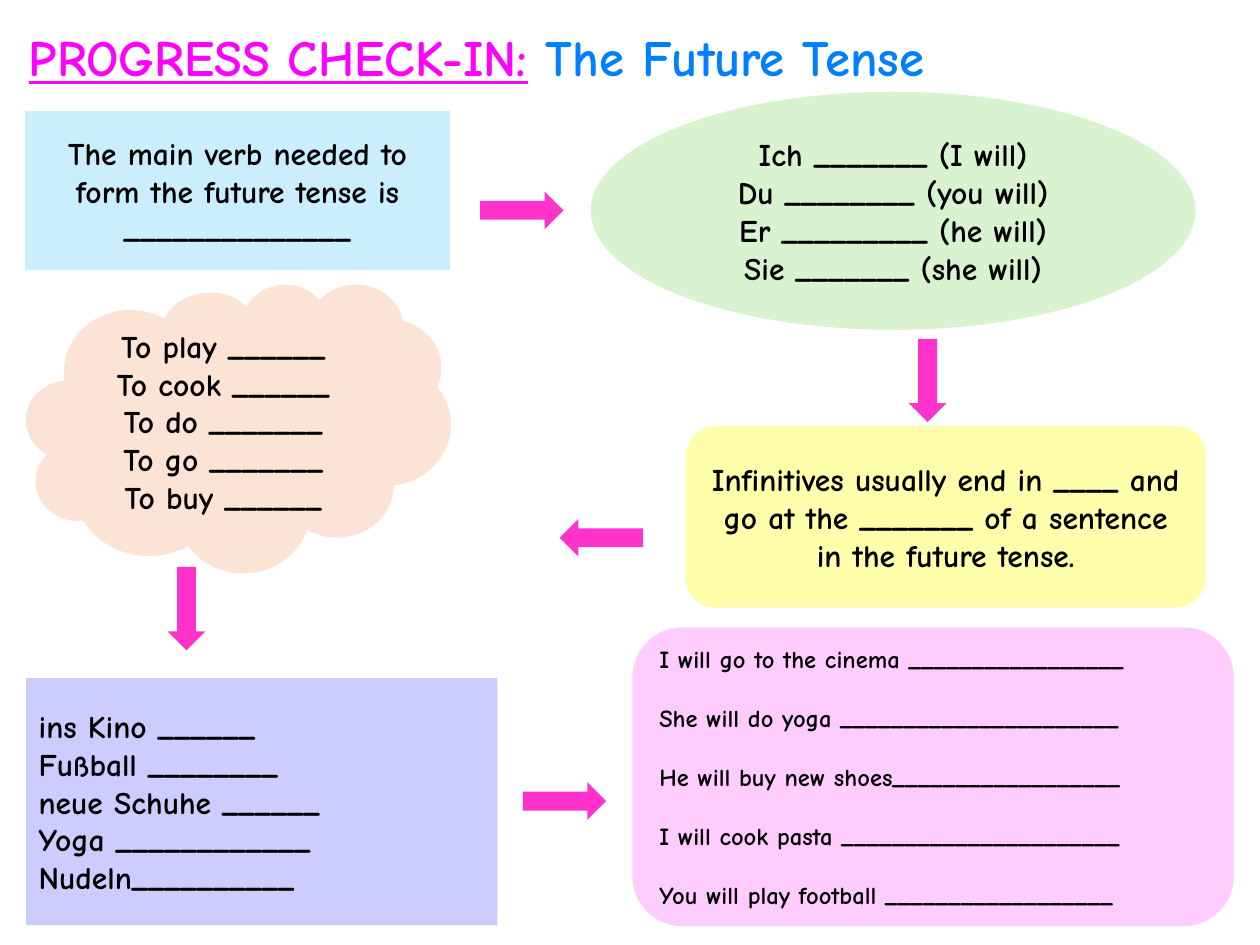
from dataclasses import dataclass

from pptx import Presentation
from pptx.dml.color import RGBColor
from pptx.enum.shapes import MSO_SHAPE
from pptx.enum.text import MSO_ANCHOR, MSO_AUTO_SIZE, PP_ALIGN
from pptx.util import Cm, Pt

RECT, ROUND = MSO_SHAPE.RECTANGLE, MSO_SHAPE.ROUNDED_RECTANGLE
OVAL, CLOUD, ARROW = MSO_SHAPE.OVAL, MSO_SHAPE.CLOUD, MSO_SHAPE.RIGHT_ARROW
LEFT, CENTER = PP_ALIGN.LEFT, PP_ALIGN.CENTER
MIDDLE, NO_FIT = MSO_ANCHOR.MIDDLE, MSO_AUTO_SIZE.NONE

FONT = "Comic Neue"
BLACK = RGBColor(0x00, 0x00, 0x00)
MAGENTA = RGBColor(0xFF, 0x00, 0xFF)
BLUE = RGBColor(0x00, 0x80, 0xFF)
HOT_PINK = RGBColor(0xFF, 0x33, 0xCC)
SKY = RGBColor(0xCA, 0xEE, 0xFB)
GREEN = RGBColor(0xD9, 0xF2, 0xD0)
YELLOW = RGBColor(0xFF, 0xFF, 0xAB)
PEACH = RGBColor(0xFB, 0xE3, 0xD6)
LILAC = RGBColor(0xCC, 0xCC, 0xFF)
PINK = RGBColor(0xFF, 0xCC, 0xFF)


@dataclass
class Panel:
    kind: int
    x: float
    y: float
    w: float
    h: float
    fill: RGBColor
    lines: list[str]
    align: int = CENTER
    size: int = 18
    gap: float = 0  # points between paragraphs


@dataclass
class Arrow:
    x: float
    y: float
    rotation: int = 0


PANELS = [
    Panel(RECT, 0.51, 2.24, 8.56, 3.2, SKY,
          ["The main verb needed to form the future tense is ______________"]),
    Panel(OVAL, 11.91, 1.85, 12.19, 4.8, GREEN,
          ["Ich _______ (I will)", "Du ________ (you will)",
           "Er _________ (he will)", "Sie _______ (she will)"]),
    Panel(ROUND, 13.82, 8.59, 10.49, 3.66, YELLOW,
          ["Infinitives usually end in ____ and go at the _______ "
           "of a sentence in the future tense."]),
    Panel(CLOUD, 0.53, 5.72, 8.56, 5.82, PEACH,
          ["To play ______", "To cook ______", "To do _______",
           "To go _______", "To buy ______"]),
    Panel(RECT, 0.53, 13.67, 9.5, 4.98, LILAC,
          ["ins Kino ______", "Fußball ________", "neue Schuhe ______",
           "Yoga ____________", "Nudeln__________"], LEFT),
    Panel(ROUND, 12.75, 12.65, 12.12, 6.02, PINK,
          ["I will go to the cinema _________________",
           "She will do yoga ______________________",
           "He will buy new shoes__________________",
           "I will cook pasta ______________________",
           "You will play football __________________"], LEFT, 14, 16.8),
]
ARROWS = [Arrow(9.68, 3.86), Arrow(17.86, 7.29, 90), Arrow(11.28, 10.46, 180),
          Arrow(2.92, 11.89, 90), Arrow(10.54, 15.77)]
ARROW_W, ARROW_H = 1.68, 0.76


def style_run(r, size: int, color: RGBColor) -> None:
    r.font.name, r.font.size, r.font.bold = FONT, Pt(size), True
    r.font.color.rgb = color


def add_flat_shape(s, kind: int, x: float, y: float, w: float, h: float,
                   fill: RGBColor):
    sp = s.shapes.add_shape(kind, Cm(x), Cm(y), Cm(w), Cm(h))
    sp.shadow.inherit = False
    sp.fill.solid()
    sp.fill.fore_color.rgb = fill
    sp.line.fill.background()
    return sp


def add_panel(s, panel: Panel) -> None:
    sp = add_flat_shape(s, panel.kind, panel.x, panel.y, panel.w, panel.h,
                        panel.fill)
    tf = sp.text_frame
    tf.word_wrap, tf.vertical_anchor = True, MIDDLE
    tf.text = "\n".join(panel.lines)
    for i, p in enumerate(tf.paragraphs):
        p.alignment = panel.align
        p.space_before = Pt(panel.gap if i else 0)
        style_run(p.runs[0], panel.size, BLACK)


def add_arrow(s, arrow: Arrow) -> None:
    sp = add_flat_shape(s, ARROW, arrow.x, arrow.y, ARROW_W, ARROW_H, HOT_PINK)
    sp.rotation = arrow.rotation


def set_title(s) -> None:
    sp = s.shapes.title
    sp.left, sp.top, sp.width, sp.height = Cm(0.33), Cm(0.38), Cm(23.98), Cm(1.5)
    tf = sp.text_frame
    tf.word_wrap, tf.auto_size, tf.vertical_anchor = True, NO_FIT, MIDDLE
    p = tf.paragraphs[0]
    p.alignment = LEFT
    for text, color, underline in [("PROGRESS CHECK-IN:", MAGENTA, True),
                                   (" The Future Tense", BLUE, False)]:
        r = p.add_run()
        r.text = text
        style_run(r, 29, color)
        r.font.underline = underline


def main() -> None:
    prs = Presentation()
    prs.slide_width, prs.slide_height = Cm(25.4), Cm(19.05)
    s = prs.slides.add_slide(prs.slide_layouts[5])  # title only

    set_title(s)
    # Question panels
    for panel in PANELS:
        add_panel(s, panel)
    # Arrows leading from one panel to the next
    for arrow in ARROWS:
        add_arrow(s, arrow)

    prs.save("out.pptx")


if __name__ == "__main__":
    main()
